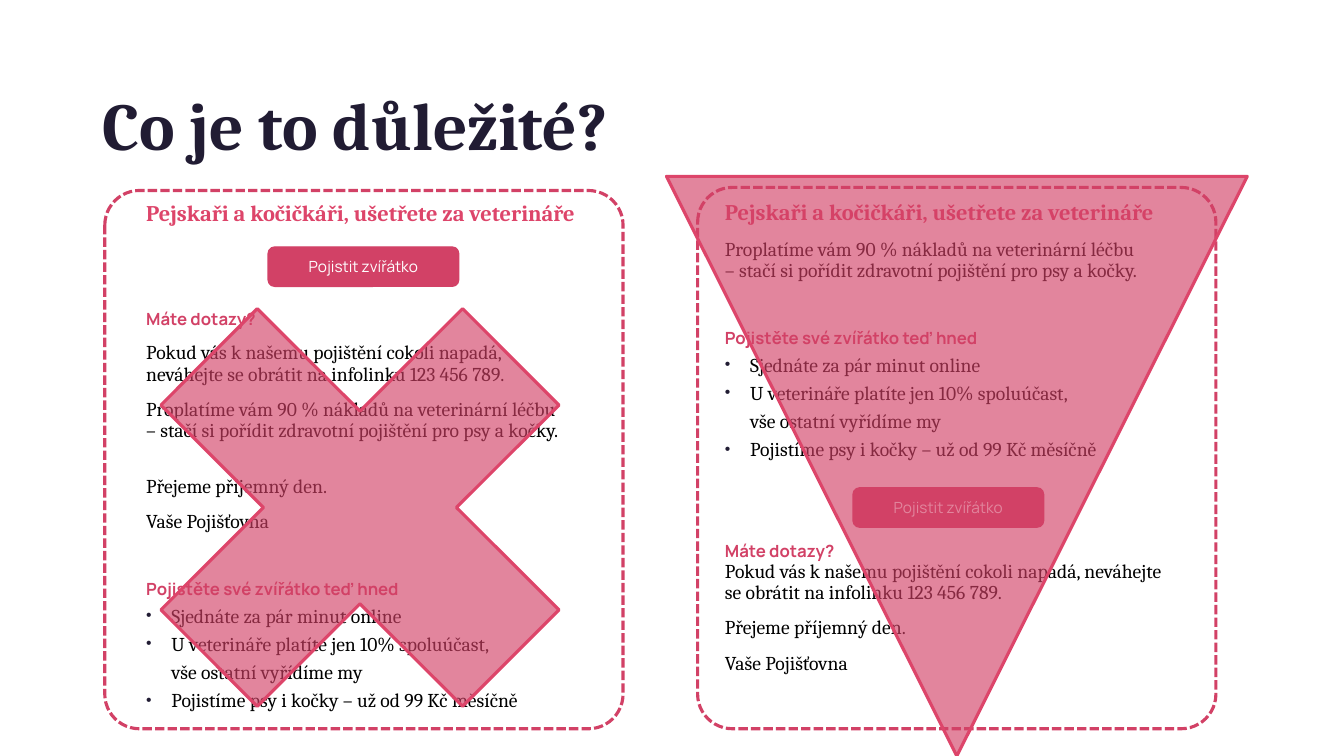
from lxml.etree import SubElement
from pptx import Presentation
from pptx.dml.color import RGBColor
from pptx.enum.dml import MSO_LINE
from pptx.enum.shapes import MSO_SHAPE
from pptx.enum.text import MSO_ANCHOR, MSO_AUTO_SIZE, PP_ALIGN
from pptx.oxml.ns import qn
from pptx.util import Inches, Pt

WIDE, HIGH = Inches(13.33), Inches(7.5)
ROSE = RGBColor(0xD2, 0x41, 0x66)
PINK = RGBColor(0xDD, 0x45, 0x6A)
NAVY = RGBColor(0x21, 0x1C, 0x33)
BLACK = RGBColor(0, 0, 0)
WHITE = RGBColor(0xFF, 0xFF, 0xFF)

FONTS = {
    "title": dict(name="Cambria", size=Pt(48), bold=True, color=NAVY),
    "lead": dict(name="Cambria", size=Pt(16), bold=True, color=PINK),
    "head": dict(name="Manrope", size=Pt(12), bold=True, color=ROSE),
    "text": dict(name="Cambria", size=Pt(14), bold=False, color=BLACK),
    "item": dict(name="Cambria", size=Pt(14), bold=False, color=BLACK),
    "button": dict(name="Manrope", size=Pt(11), bold=False, color=WHITE),
}

LEAD = "Pejskaři a kočičkáři, ušetřete za veterináře"
OFFER = ("Proplatíme vám 90 % nákladů na veterinární léčbu\n"
         "– stačí si pořídit zdravotní pojištění pro psy a kočky.")
HELP = ("Pokud vás k našemu pojištění cokoli napadá, "
        "neváhejte se obrátit na infolinku 123 456 789.")
BYE = "Přejeme příjemný den."
SIGN = "Vaše Pojišťovna"
ASK = "Máte dotazy?"
ITEMS = [
    ("head", "Pojistěte své zvířátko teď hned", 34),
    ("item", "Sjednáte za pár minut online", 0),
    ("item", "U veterináře platíte jen 10% spoluúčast,\nvše ostatní vyřídíme my", 0),
    ("item", "Pojistíme psy i kočky – už od 99 Kč měsíčně", 0),
]
MIXED = [("lead", LEAD, 0), ("head", ASK, 60), ("text", HELP, 10),
         ("text", OFFER, 10), ("text", BYE, 25), ("text", SIGN, 10), *ITEMS]
CLEAR = [("lead", LEAD, 0), ("text", OFFER, 10), *ITEMS, ("head", ASK, 59),
         ("text", HELP, 0), ("text", BYE, 10), ("text", SIGN, 10)]


def area(x, y, w, h):
    """Turn percentages of the slide into left, top, width and height."""
    return [int(side * part / 100)
            for side, part in zip((WIDE, HIGH, WIDE, HIGH), (x, y, w, h))]


def apply(thing, looks):
    """Set each attribute that the dict holds."""
    for key, value in looks.items():
        if key == "color":
            thing.color.rgb = value
        else:
            setattr(thing, key, value)


def mark(para, bullet):
    """Give a paragraph its bullet and indent, or clear them."""
    props = para._p.get_or_add_pPr()
    gap = Inches(0.25) if bullet else 0
    props.set("marL", str(gap))
    props.set("indent", str(-gap))
    if not bullet:
        SubElement(props, qn("a:buNone"))
        return
    tint = SubElement(props, qn("a:buClr"))
    SubElement(tint, qn("a:srgbClr"), val=str(NAVY))
    SubElement(props, qn("a:buSzPct"), val="80000")
    SubElement(props, qn("a:buFont"), typeface="Arial")
    SubElement(props, qn("a:buChar"), char="•")


def write(holder, box, lines, anchor):
    """Move a placeholder and fill it with styled paragraphs."""
    apply(holder, dict(zip(("left", "top", "width", "height"), area(*box))))
    frame = holder.text_frame
    apply(frame, dict(word_wrap=True, auto_size=MSO_AUTO_SIZE.NONE,
                      vertical_anchor=anchor))
    for num, (kind, words, space) in enumerate(lines):
        para = frame.add_paragraph() if num else frame.paragraphs[0]
        para.text = words
        bullet = kind == "item"
        mark(para, bullet)
        apply(para, dict(alignment=PP_ALIGN.LEFT, space_before=Pt(space),
                         space_after=Pt(0), line_spacing=1.2 if bullet else 0.9))
        for run in para.runs:
            apply(run.font, FONTS[kind])


def draw(slide, kind, box, line, width, fill=None):
    """Add a preset shape with its outline and optional fill."""
    shape = slide.shapes.add_shape(kind, *area(*box))
    shape.shadow.inherit = False
    apply(shape.line, dict(color=line, width=Pt(width)))
    if fill is None:
        shape.fill.background()
    else:
        shape.fill.solid()
        shape.fill.fore_color.rgb = fill
    return shape


def button(slide, x, y):
    """Add a call to action."""
    shape = draw(slide, MSO_SHAPE.ROUNDED_RECTANGLE, (x, y, 14.18, 5.2), ROSE, 1, ROSE)
    frame = shape.text_frame
    frame.vertical_anchor = MSO_ANCHOR.MIDDLE
    para = frame.paragraphs[0]
    para.text = "Pojistit zvířátko"
    para.alignment = PP_ALIGN.CENTER
    apply(para.runs[0].font, FONTS["button"])


def card(slide, x, y, h):
    """Add a dashed frame."""
    shape = draw(slide, MSO_SHAPE.ROUNDED_RECTANGLE, (x, y, 38.56, h), ROSE, 2.25)
    shape.adjustments[0] = 0.067
    shape.line.dash_style = MSO_LINE.SQUARE_DOT


def veil(slide, kind, x, y, turn=0):
    """Add a see-through sign over a card."""
    shape = draw(slide, kind, (x, y, 43.21, 76.67), PINK, 2.25, ROSE)
    shape.rotation = turn
    tint = shape._element.spPr.find(qn("a:solidFill"))[0]
    SubElement(tint, qn("a:alpha"), val="64000")


def main():
    """Build the slide and save it."""
    deck = Presentation()
    apply(deck, dict(slide_width=WIDE, slide_height=HIGH))
    slide = deck.slides.add_slide(deck.slide_layouts[3])
    title, left, right = slide.placeholders
    write(title, (6.9, 9.47, 86.27, 15.2),
          [("title", "Co je to důležité?", 0)], MSO_ANCHOR.MIDDLE)
    write(left, (10.13, 26.13, 33.91, 71.6), MIXED, MSO_ANCHOR.TOP)
    write(right, (53.19, 26, 34.81, 68.93), CLEAR, MSO_ANCHOR.TOP)
    button(slide, 19.95, 32.67)
    button(slide, 63.47, 64.53)
    veil(slide, MSO_SHAPE.MATH_MULTIPLY, 5.18, 28.8)
    card(slide, 7.8, 25.2, 71.2)
    card(slide, 51.91, 24.8, 71.6)
    veil(slide, MSO_SHAPE.ISOSCELES_TRIANGLE, 49.59, 23.33, 180)
    deck.save("out.pptx")


if __name__ == "__main__":
    main()
